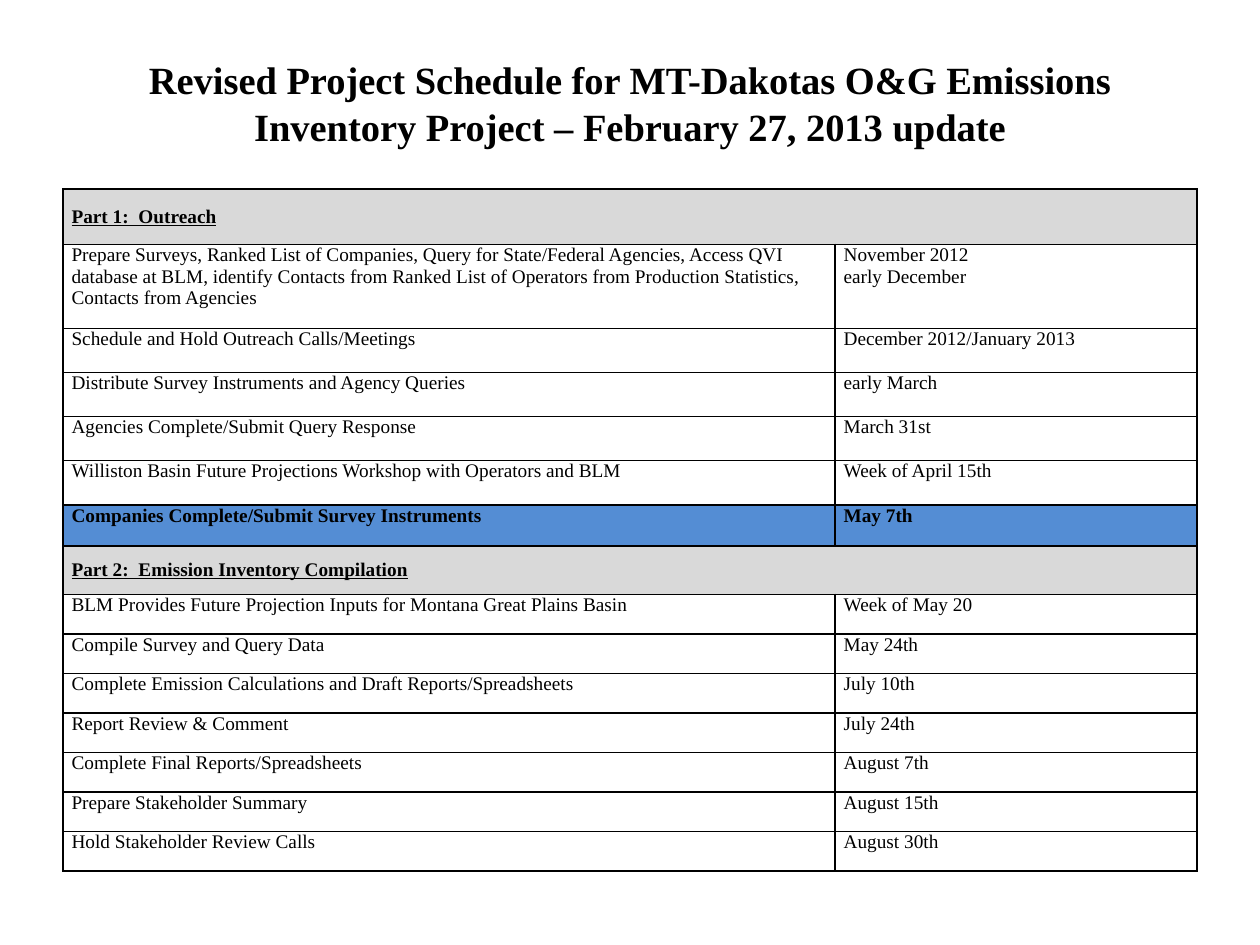
from dataclasses import dataclass

from lxml.etree import SubElement
from pptx import Presentation
from pptx.dml.color import RGBColor
from pptx.enum.text import MSO_ANCHOR as Anchor, PP_ALIGN as Align
from pptx.oxml.ns import qn
from pptx.util import Pt

FONT = "Times New Roman"
BLACK = RGBColor(0x00, 0x00, 0x00)
GREY = RGBColor(0xD9, 0xD9, 0xD9)
BLUE = RGBColor(0x54, 0x8D, 0xD4)

LEFT, WIDTH = 36, 648
TASK_WIDTH, DATE_WIDTH = 441.2, 206.8
CELL_INSET = 4.9


@dataclass
class Step:
    task: str
    dates: tuple[str, ...]
    height: float
    milestone: bool = False


@dataclass
class Part:
    heading: str
    top: float
    heading_height: float
    steps: list[Step]


OUTREACH_ROW, COMPILATION_ROW = 25.2, 22.6

PARTS = [
    Part("Part 1:  Outreach", 108, 31.7, [
        Step("Prepare Surveys, Ranked List of Companies, Query for State/Federal Agencies, "
             "Access QVI database at BLM, identify Contacts from Ranked List of Operators "
             "from Production Statistics, Contacts from Agencies",
             ("November 2012", "early December"), 48),
        Step("Schedule and Hold Outreach Calls/Meetings",
             ("December 2012/January 2013",), OUTREACH_ROW),
        Step("Distribute Survey Instruments and Agency Queries", ("early March",), OUTREACH_ROW),
        Step("Agencies Complete/Submit Query Response", ("March 31st",), OUTREACH_ROW),
        Step("Williston Basin Future Projections Workshop with Operators and BLM",
             ("Week of April 15th",), OUTREACH_ROW),
        Step("Companies Complete/Submit Survey Instruments", ("May 7th",), OUTREACH_ROW, True),
    ]),
    Part("Part 2:  Emission Inventory Compilation", 311.9, 27.8, [
        Step(task, (date,), COMPILATION_ROW) for task, date in (
            ("BLM Provides Future Projection Inputs for Montana Great Plains Basin",
             "Week of May 20"),
            ("Compile Survey and Query Data", "May 24th"),
            ("Complete Emission Calculations and Draft Reports/Spreadsheets", "July 10th"),
            ("Report Review & Comment", "July 24th"),
            ("Complete Final Reports/Spreadsheets", "August 7th"),
            ("Prepare Stakeholder Summary", "August 15th"),
            ("Hold Stakeholder Review Calls", "August 30th"),
        )
    ]),
]


def add_span(para, text: str, size: float, bold=False, underline=False) -> None:
    span = para.add_run()
    span.text = text
    font = span.font
    font.name, font.size = FONT, Pt(size)
    font.bold, font.underline = bold, underline
    font.color.rgb = BLACK


def add_borders(cell) -> None:
    properties = cell._tc.get_or_add_tcPr()
    for side in ("a:lnL", "a:lnR", "a:lnT", "a:lnB"):
        line = SubElement(properties, qn(side), w=str(Pt(1)))
        fill = SubElement(line, qn("a:solidFill"))
        SubElement(fill, qn("a:srgbClr"), val=str(BLACK))


def fill_cell(cell, lines: tuple[str, ...], color: RGBColor | None = None,
              bold=False, underline=False) -> None:
    cell.margin_left = cell.margin_right = Pt(CELL_INSET)
    cell.margin_top = cell.margin_bottom = Pt(0)
    frame = cell.text_frame
    for index, text in enumerate(lines):
        para = frame.add_paragraph() if index else frame.paragraphs[0]
        add_span(para, text, 11, bold, underline)
    if color is None:
        cell.fill.background()
    else:
        cell.fill.solid()
        cell.fill.fore_color.rgb = color


def add_part(page, part: Part) -> None:
    heights = [part.heading_height] + [step.height for step in part.steps]
    table = page.shapes.add_table(len(heights), 2, Pt(LEFT), Pt(part.top),
                                  Pt(WIDTH), Pt(sum(heights))).table
    table.first_row = table.horz_banding = False
    for column, width in zip(table.columns, (TASK_WIDTH, DATE_WIDTH)):
        column.width = Pt(width)
    for row, height in zip(table.rows, heights):
        row.height = Pt(height)
    for cell in table.iter_cells():
        add_borders(cell)

    # Heading across both columns
    heading = table.cell(0, 0)
    heading.merge(table.cell(0, 1))
    heading.vertical_anchor = Anchor.MIDDLE
    fill_cell(heading, (part.heading,), GREY, bold=True, underline=True)

    # One row for each step
    for row, step in enumerate(part.steps, start=1):
        color = BLUE if step.milestone else None
        fill_cell(table.cell(row, 0), (step.task,), color, step.milestone)
        fill_cell(table.cell(row, 1), step.dates, color, step.milestone)


def add_title(page, text: str) -> None:
    box = page.shapes.add_textbox(Pt(LEFT), Pt(21.6), Pt(WIDTH), Pt(74.2))
    frame = box.text_frame
    frame.word_wrap = True
    frame.vertical_anchor = Anchor.MIDDLE
    para = frame.paragraphs[0]
    para.alignment = Align.CENTER
    add_span(para, text, 22, bold=True)


def main() -> None:
    deck = Presentation()
    deck.slide_width, deck.slide_height = Pt(720), Pt(540)
    page = deck.slides.add_slide(deck.slide_layouts[6])
    add_title(page, "Revised Project Schedule for MT-Dakotas O&G Emissions "
                    "Inventory Project – February 27, 2013 update")
    for part in PARTS:
        add_part(page, part)
    deck.save("out.pptx")


if __name__ == "__main__":
    main()
